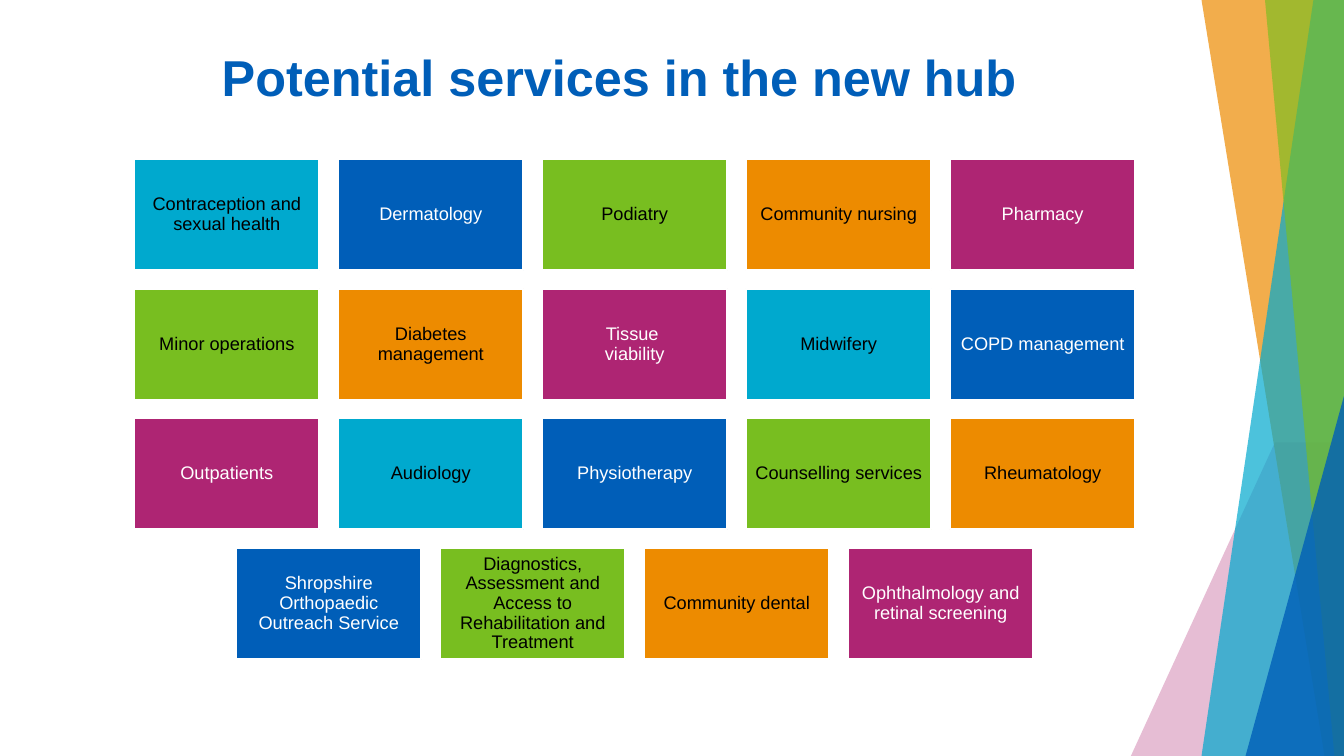
from dataclasses import dataclass

from lxml import etree
from pptx import Presentation
from pptx.dml.color import RGBColor
from pptx.enum.shapes import MSO_SHAPE
from pptx.enum.text import MSO_ANCHOR, PP_ALIGN
from pptx.oxml.ns import qn
from pptx.util import Cm, Pt

RECT = MSO_SHAPE.RECTANGLE
TRIANGLE = MSO_SHAPE.ISOSCELES_TRIANGLE
MIDDLE = MSO_ANCHOR.MIDDLE
CENTER = PP_ALIGN.CENTER


@dataclass(frozen=True)
class Theme:
    cyan: str = "00A9CE"
    blue: str = "005EB8"
    green: str = "78BE20"
    orange: str = "ED8B00"
    plum: str = "AE2573"
    white: str = "FFFFFF"
    black: str = "000000"
    font: str = "Arial"
    head: int = 36
    body: int = 13


T = Theme()
WIDTH, HEIGHT = 33.87, 19.05
DARK = (T.blue, T.plum)  # fills that carry white text

SERVICES = [
    [("Contraception and sexual health", T.cyan), ("Dermatology", T.blue),
     ("Podiatry", T.green), ("Community nursing", T.orange),
     ("Pharmacy", T.plum)],
    [("Minor operations", T.green), ("Diabetes management", T.orange),
     ("Tissue \vviability", T.plum), ("Midwifery", T.cyan),
     ("COPD management", T.blue)],
    [("Outpatients", T.plum), ("Audiology", T.cyan),
     ("Physiotherapy", T.blue), ("Counselling services", T.green),
     ("Rheumatology", T.orange)],
    [("Shropshire Orthopaedic Outreach Service", T.blue),
     ("Diagnostics, Assessment and Access to Rehabilitation and Treatment",
      T.green),
     ("Community dental", T.orange),
     ("Ophthalmology and retinal screening", T.plum)],
]

# Ribbons: top-left x and y, bottom-left x, colour, opacity in percent
RIBBONS = [
    (3.63, 11.15, 0, T.plum, 30),
    (1.78, 0, 4.88, T.orange, 70),
    (4.6, 0, 1.78, T.cyan, 70),
    (3.38, 0, 5.13, T.green, 65),
]


def paint(shape, color, alpha=100):
    """Fill a shape flatly, without outline or shadow."""
    shape.shadow.inherit = False
    shape.line.fill.background()
    shape.fill.solid()
    shape.fill.fore_color.rgb = RGBColor.from_string(color)
    if alpha < 100:
        tone = shape.fill._xPr.find(qn("a:solidFill"))[0]
        etree.SubElement(tone, qn("a:alpha"), val=str(alpha * 1000))


def write(shape, text, size, color, bold=False):
    """Set one centred paragraph in the middle of a shape."""
    frame = shape.text_frame
    frame.word_wrap = True
    frame.vertical_anchor = MIDDLE
    para = frame.paragraphs[0]
    para.text = text
    para.alignment = CENTER
    para.font.name = T.font
    para.font.size = Pt(size)
    para.font.bold = bold
    para.font.color.rgb = RGBColor.from_string(color)
    return frame


def add_ribbons(slide, left, top, width, height):
    """Overlapping bands along the right edge."""
    def point(x, y):
        return Cm(left + x), Cm(top + y)

    for x, y, foot, color, alpha in RIBBONS:
        band = slide.shapes.build_freeform(*point(x, y), scale=1.0)
        band.add_line_segments(
            [point(width, y), point(width, height), point(foot, height)])
        paint(band.convert_to_shape(), color, alpha)

    # Front corner
    x, y = 2.89, 9.98
    corner = slide.shapes.add_shape(
        TRIANGLE, *point(x, y), Cm(width - x), Cm(height - y))
    corner.adjustments[0] = 1
    paint(corner, T.blue, 80)


def add_title(slide, left, top, width, height):
    box = slide.shapes.add_textbox(Cm(left), Cm(top), Cm(width), Cm(height))
    write(box, "Potential services in the new hub", T.head, T.blue, True)


def add_tiles(slide, left, top, width, height):
    """Grid of services; a shorter row is centred."""
    gap = 0.47
    cols, rows = len(SERVICES[0]), len(SERVICES)
    wide = (width - gap * (cols - 1)) / cols
    high = (height - gap * (rows - 1)) / rows
    for r, row in enumerate(SERVICES):
        start = left + (cols - len(row)) * (wide + gap) / 2
        for c, (name, color) in enumerate(row):
            tile = slide.shapes.add_shape(
                RECT, Cm(start + c * (wide + gap)),
                Cm(top + r * (high + gap)), Cm(wide), Cm(high))
            paint(tile, color)
            tile.line.color.rgb = RGBColor.from_string(T.white)
            tile.line.width = Pt(1.5)
            ink = T.white if color in DARK else T.black
            frame = write(tile, name, T.body, ink)
            frame.paragraphs[0].line_spacing = 0.9
            frame.margin_left = frame.margin_right = Cm(0.13)
            frame.margin_top = frame.margin_bottom = Cm(0.13)


def main():
    deck = Presentation()
    deck.slide_width, deck.slide_height = Cm(WIDTH), Cm(HEIGHT)
    slide = deck.slides.add_slide(deck.slide_layouts[6])
    add_ribbons(slide, 28.5, 0, WIDTH - 28.5, HEIGHT)
    add_title(slide, 1.88, 0.89, 27.46, 2.06)
    add_tiles(slide, 3.38, 4.01, 25.23, 12.6)
    deck.save("out.pptx")


if __name__ == "__main__":
    main()
